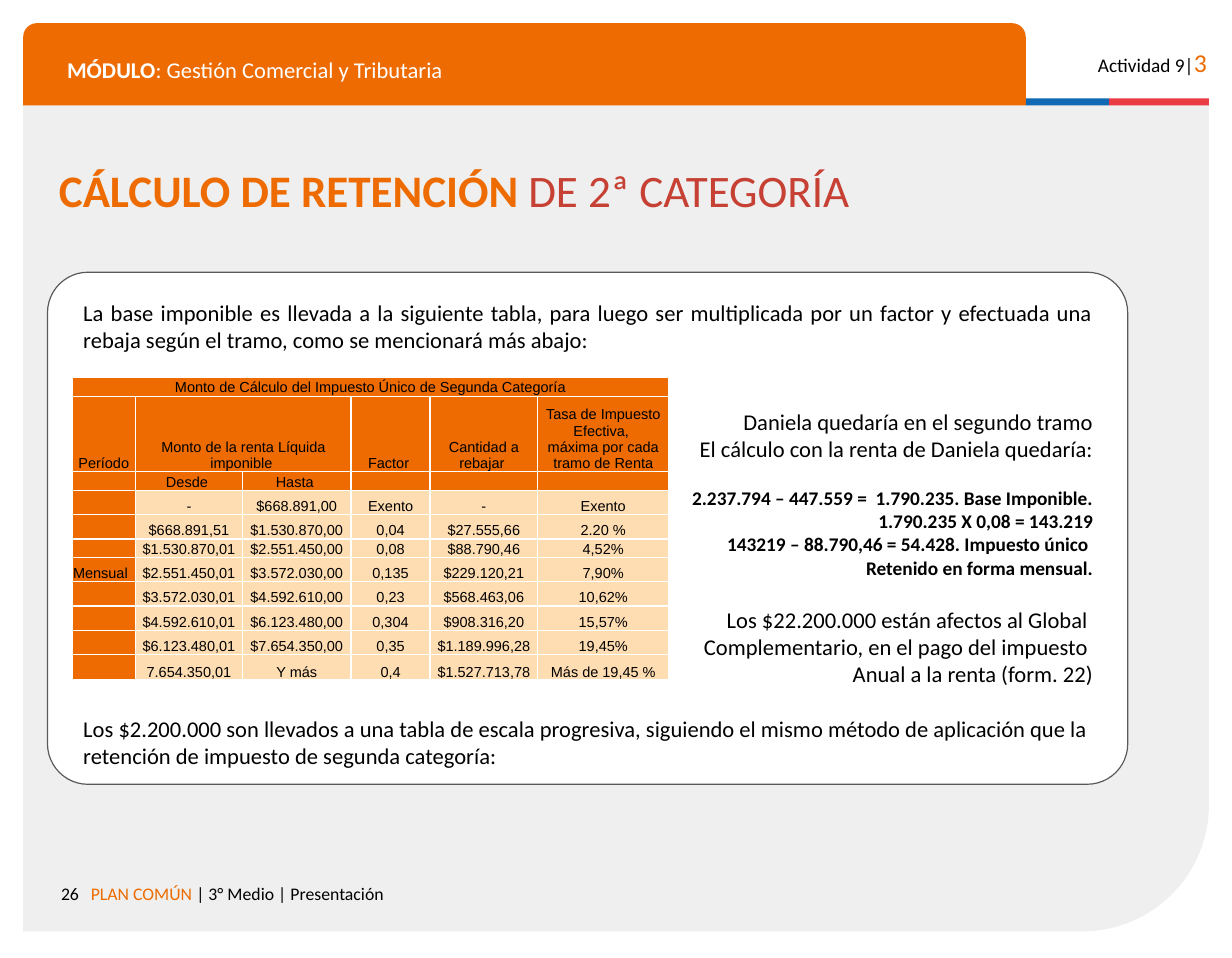
from dataclasses import dataclass
from lxml.etree import SubElement
from pptx import Presentation
from pptx.dml.color import RGBColor
from pptx.enum.shapes import MSO_SHAPE as Shape
from pptx.enum.text import MSO_ANCHOR as Anchor, PP_ALIGN as Align
from pptx.oxml.ns import qn
from pptx.util import Inches, Pt


@dataclass(frozen=True)
class Theme:
    orange: str = "ED6B00"
    peach: str = "FFDDB2"
    red: str = "C64033"
    flag_blue: str = "0F69B4"
    flag_red: str = "EB3C46"
    gray: str = "EFEFEF"
    edge: str = "595959"
    white: str = "FFFFFF"
    black: str = "000000"
    font: str = "Calibri"
    grid_font: str = "Arial"
    title: int = 28
    large: int = 16
    body: int = 14
    small: int = 12
    foot: int = 11
    cell: int = 9


T = Theme()


@dataclass(frozen=True)
class Box:
    left: float
    top: float
    width: float
    height: float

    def at(self, col, row, cols, rows):
        """Return a part of this box on its grid of 100 by 100."""
        return Box(self.left + self.width * col / 100,
                   self.top + self.height * row / 100,
                   self.width * cols / 100, self.height * rows / 100)

    def emu(self):
        return [Inches(n) for n in (self.left, self.top, self.width, self.height)]


PAGE = Box(0, 0, 10.63, 8.27)


def style(font, size=None, color=None, bold=None, name=None):
    if size:
        font.size = Pt(size)
    if color:
        font.color.rgb = RGBColor.from_string(color)
    if name:
        font.name = name
    font.bold = bold


def paint(item, color):
    item.fill.solid()
    item.fill.fore_color.rgb = RGBColor.from_string(color)


def block(slide, kind, box, fill, adjust=(), edge=None):
    shape = slide.shapes.add_shape(kind, *box.emu())
    shape.shadow.inherit = False
    paint(shape, fill)
    for i, value in enumerate(adjust):
        shape.adjustments[i] = value
    if edge:
        shape.line.color.rgb = RGBColor.from_string(edge)
        shape.line.width = Pt(0.75)
    else:
        shape.line.fill.background()
    return shape


def frame(slide, box, anchor=Anchor.TOP):
    text = slide.shapes.add_textbox(*box.emu()).text_frame
    text.word_wrap = True
    text.vertical_anchor = anchor
    text.margin_left = text.margin_right = Inches(0.1)
    text.margin_top = text.margin_bottom = Inches(0.1)
    return text


def label(slide, box, size, runs, align=Align.LEFT, anchor=Anchor.TOP):
    """Write one line; each run is its words and its own style."""
    para = frame(slide, box, anchor).paragraphs[0]
    para.alignment = align
    style(para.font, size, name=T.font)
    for words, look in runs:
        run = para.add_run()
        run.text = words
        style(run.font, **look)
    return para


def header(slide, box):
    block(slide, Shape.ROUND_2_SAME_RECTANGLE, box.at(0, 0, 84.56, 100),
          T.orange, (0.167, 0))
    block(slide, Shape.RECTANGLE, box.at(84.56, 91.55, 7.04, 8.45), T.flag_blue)
    block(slide, Shape.RECTANGLE, box.at(91.59, 91.55, 8.41, 8.45), T.flag_red)
    label(slide, box.at(2.74, 25.35, 79.57, 49.3), T.body,
          [("MÓDULO", {"color": T.white, "bold": True}),
           (": Gestión Comercial y Tributaria", {"color": T.white})])
    label(slide, box.at(88.27, 14.08, 12.51, 53.52), T.small,
          [("Actividad 9|", {"color": T.black}),
           ("3", {"color": T.orange, "size": T.large})], Align.RIGHT)


def footer(slide, box):
    label(slide, box.at(0, 0, 7.6, 76), T.foot,
          [("26", {"color": T.black})], Align.RIGHT)
    label(slide, box.at(6.36, 0, 93.64, 100), T.foot,
          [("PLAN COMÚN ", {"color": T.orange}),
           ("| 3° Medio | Presentación", {"color": T.black})])


def heading(slide, box):
    para = label(slide, box, T.title,
                 [("CÁLCULO DE RETENCIÓN ", {"color": T.orange, "bold": True}),
                  ("DE 2ª CATEGORÍA", {"color": T.red})], anchor=Anchor.MIDDLE)
    para.line_spacing = 0.8


# Each group: alignment, size, bold, space before in points, lines
STORY = [
    (Align.JUSTIFY, T.body, False, 0, [
        "La base imponible es llevada a la siguiente tabla, para luego ser multiplicada "
        "por un factor y efectuada una rebaja según el tramo, como se mencionará más abajo: "]),
    (Align.RIGHT, T.body, False, 34, [
        "Daniela quedaría en el segundo tramo",
        "El cálculo con la renta de Daniela quedaría:"]),
    (Align.RIGHT, T.small, True, 15, [
        "2.237.794 – 447.559 =  1.790.235. Base Imponible.",
        "1.790.235 X 0,08 = 143.219",
        "143219 – 88.790,46 = 54.428. Impuesto único ",
        "Retenido en forma mensual."]),
    (Align.RIGHT, T.body, False, 17, [
        "Los $22.200.000 están afectos al Global ",
        "Complementario, en el pago del impuesto ",
        "Anual a la renta (form. 22)"]),
    (Align.LEFT, T.body, False, 17, [
        "Los $2.200.000 son llevados a una tabla de escala progresiva, siguiendo el mismo "
        "método de aplicación que la retención de impuesto de segunda categoría:"]),
]


def story(slide, box):
    text = frame(slide, box, Anchor.MIDDLE)
    para = text.paragraphs[0]
    for align, size, bold, gap, lines in STORY:
        for i, line in enumerate(lines):
            if para.text:
                para = text.add_paragraph()
            para.text = line
            para.alignment = align
            para.space_before = Pt(0 if i else gap)
            style(para.font, size, T.black, bold, T.font)


COLS = [0.55, 0.92, 0.94, 0.68, 0.93, 1.13]
ROWS = [0.16, 0.65, 0.16, 0.21, 0.21, 0.16, 0.21, 0.21, 0.21, 0.21, 0.22]
RATES = [
    ["Monto de Cálculo del Impuesto Único de Segunda Categoría", "", "", "", "", ""],
    ["Período", "Monto de la renta Líquida imponible ", "", "Factor ", "Cantidad a rebajar ",
     "Tasa de Impuesto Efectiva, \vmáxima por cada tramo de Renta"],
    ["", "Desde ", "Hasta ", "", "", ""],
    ["", "-", "$668.891,00", "Exento", "-", "Exento"],
    ["", "$668.891,51", "$1.530.870,00", "0,04", "$27.555,66", "2.20 %"],
    ["", "$1.530.870,01", "$2.551.450,00", "0,08", "$88.790,46", "4,52%"],
    ["Mensual", "$2.551.450,01", "$3.572.030,00", "0,135", "$229.120,21", "7,90%"],
    ["", "$3.572.030,01", "$4.592.610,00", "0,23", "$568.463,06", "10,62%"],
    ["", "$4.592.610,01", "$6.123.480,00", "0,304", "$908.316,20", "15,57%"],
    ["", "$6.123.480,01", "$7.654.350,00", "0,35", "$1.189.996,28", "19,45%"],
    ["", "7.654.350,01", "Y más", "0,4", "$1.527.713,78", "Más de 19,45 %"],
]


def border(cell):
    props = cell._tc.get_or_add_tcPr()
    for i, side in enumerate(("a:lnL", "a:lnR", "a:lnT", "a:lnB")):
        line = props.makeelement(qn(side), {"w": str(Pt(1))})
        fill = SubElement(line, qn("a:solidFill"))
        SubElement(fill, qn("a:srgbClr"), val=T.white)
        props.insert(i, line)


def rates(slide, box):
    table = slide.shapes.add_table(len(ROWS), len(COLS), *box.emu()).table
    for col, share in zip(table.columns, COLS):
        col.width = Inches(box.width * share / sum(COLS))
    for row, share in zip(table.rows, ROWS):
        row.height = Inches(box.height * share / sum(ROWS))
    for r, line in enumerate(RATES):
        for c, words in enumerate(line):
            cell = table.cell(r, c)
            paint(cell, T.peach if r > 2 and c else T.orange)
            border(cell)
            cell.margin_left = cell.margin_right = cell.margin_top = Inches(0.01)
            cell.margin_bottom = 0
            cell.vertical_anchor = Anchor.BOTTOM if r else Anchor.MIDDLE
            para = cell.text_frame.paragraphs[0]
            para.text = words
            para.alignment = Align.LEFT if words == "Mensual" else Align.CENTER
            style(para.font, T.cell, T.black, name=T.grid_font)
            if not words:
                SubElement(para._p, qn("a:endParaRPr"), sz=str(T.cell * 100))
    table.cell(0, 0).merge(table.cell(0, 5))
    table.cell(1, 1).merge(table.cell(1, 2))


def panel(slide, box):
    block(slide, Shape.ROUNDED_RECTANGLE, box, T.white, (0.079,), T.edge)
    story(slide, box.at(2.25, 0, 95.6, 102.26))
    rates(slide, box.at(2.25, 20.59, 55.26, 59.05))


def main():
    deck = Presentation()
    deck.slide_width, deck.slide_height = PAGE.emu()[2:]
    slide = deck.slides.add_slide(deck.slide_layouts[6])
    # Gray ground, rounded at the lower right
    ground = block(slide, Shape.ROUND_1_RECTANGLE, PAGE.at(1.88, 10.88, 96.24, 86.34),
                   T.gray, (0.153,))
    ground.rotation = 180
    ground._element.spPr.xfrm.set("flipH", "1")
    # Regions from top to bottom
    header(slide, PAGE.at(1.88, 2.42, 96.24, 8.59))
    footer(slide, PAGE.at(1.88, 91.05, 71.78, 4.59))
    heading(slide, PAGE.at(3.86, 18.14, 92.1, 4.23))
    panel(slide, PAGE.at(3.86, 28.42, 87.68, 53.45))
    deck.save("out.pptx")


if __name__ == "__main__":
    main()
